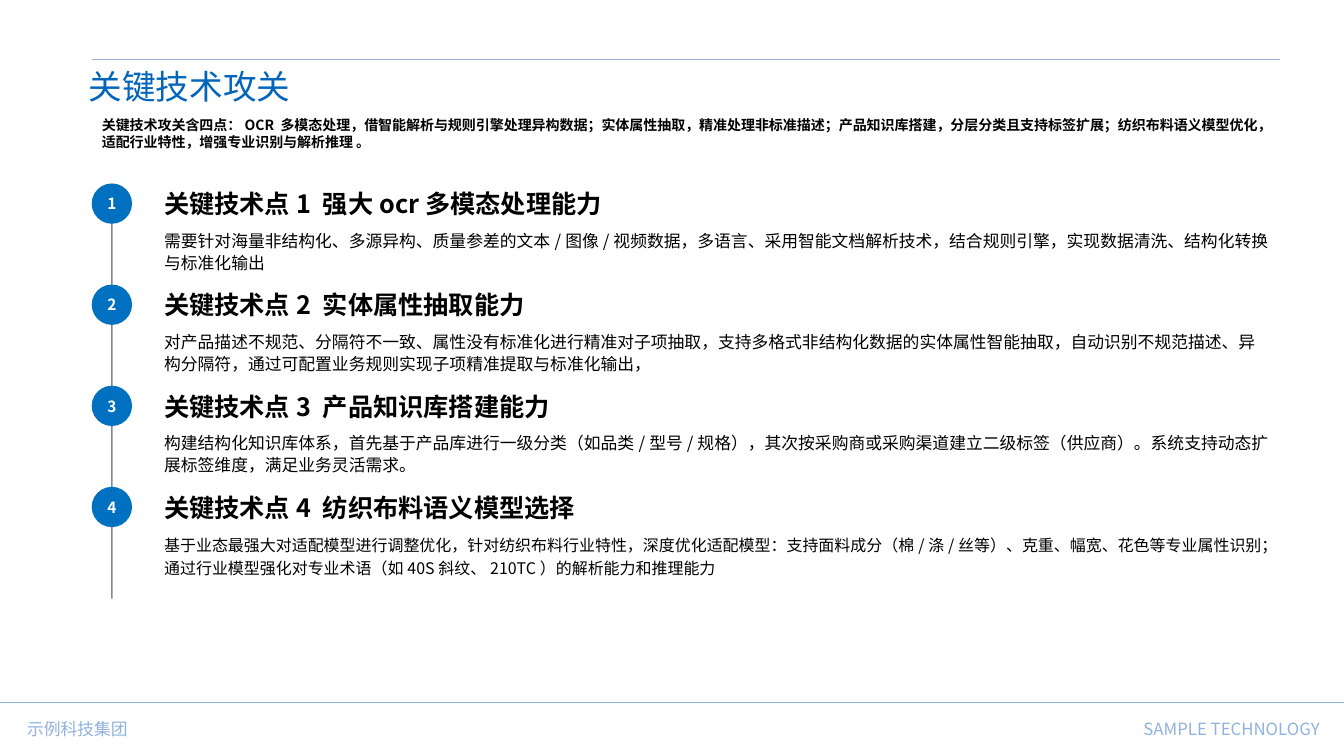
from lxml.etree import SubElement
from pptx import Presentation
from pptx.dml.color import RGBColor
from pptx.enum.shapes import MSO_CONNECTOR as CONN, MSO_SHAPE as SHAPE
from pptx.enum.text import MSO_ANCHOR as ANCHOR, MSO_AUTO_SIZE as FIT, PP_ALIGN as ALIGN
from pptx.oxml.ns import qn
from pptx.util import Inches, Pt

WIDTH, HEIGHT = 13.33, 7.5
FONT = "Noto Sans CJK SC"
BLUE, DOT_BLUE, PALE, DARK = "0065BB", "0070C0", "90B2DE", "0F1423"
BLACK, WHITE = "000000", "FFFFFF"

# Grid: a column of dots, a column of text, equal rows
LEFT, TEXT_LEFT, RIGHT = 0.91, 1.53, 12.7
TOP, ROW_STEP, DOT = 1.82, 3.01 / 3, 0.4
FOOTER_LINE, FOOTER_TOP = 6.97, 7.08

# Heading, description, description size, line spacing
POINTS = [
    ("关键技术点1 强大ocr多模态处理能力",
     "需要针对海量非结构化、多源异构、质量参差的文本/图像/视频数据，多语言、采用智能文档解析技术，"
     "结合规则引擎，实现数据清洗、结构化转换与标准化输出", 12, 1.1),
    ("关键技术点2 实体属性抽取能力",
     "对产品描述不规范、分隔符不一致、属性没有标准化进行精准对子项抽取，支持多格式非结构化数据的实体属性智能抽取，"
     "自动识别不规范描述、异构分隔符，通过可配置业务规则实现子项精准提取与标准化输出，", 12, 1.1),
    ("关键技术点3 产品知识库搭建能力",
     "构建结构化知识库体系，首先基于产品库进行一级分类（如品类/型号/规格），其次按采购商或采购渠道建立二级标签（供应商）。"
     "系统支持动态扩展标签维度，满足业务灵活需求。", 12, 1.1),
    ("关键技术点4 纺织布料语义模型选择",
     "基于业态最强大对适配模型进行调整优化，针对纺织布料行业特性，深度优化适配模型："
     "支持面料成分（棉/涤/丝等）、克重、幅宽、花色等专业属性识别；"
     "通过行业模型强化对专业术语（如40S斜纹、210TC）的解析能力和推理能力", 11.4, 1.2),
]
INTRO = ("关键技术攻关含四点：OCR 多模态处理，借智能解析与规则引擎处理异构数据；实体属性抽取，精准处理非标准描述；"
         "产品知识库搭建，分层分类且支持标签扩展；纺织布料语义模型优化，适配行业特性，增强专业识别与解析推理 。")


def rgb(value):
    return RGBColor.from_string(value)


def write(sp, text, size, color, bold=False, align=ALIGN.LEFT, anchor=ANCHOR.TOP, spacing=1.0):
    tf = sp.text_frame
    tf.text = text
    tf.word_wrap = True
    tf.auto_size = FIT.NONE
    tf.vertical_anchor = anchor
    p = tf.paragraphs[0]
    p.alignment, p.line_spacing, p.space_before = align, spacing, Pt(0)
    r = p.runs[0]
    r.font.name, r.font.size, r.font.bold = FONT, Pt(size), bold
    r.font.color.rgb = rgb(color)
    SubElement(r._r.get_or_add_rPr(), qn("a:ea"), typeface=FONT)
    return p


def place(sp, x, y, w, h):
    sp.left, sp.top, sp.width, sp.height = (Inches(v) for v in (x, y, w, h))
    return sp


def add_text(shapes, box, *args, **style):
    write(shapes.add_textbox(*(Inches(v) for v in box)), *args, **style)


def add_line(s, x1, y1, x2, y2, color, alpha=None):
    line = s.shapes.add_connector(CONN.STRAIGHT, *(Inches(v) for v in (x1, y1, x2, y2)))
    line.line.width = Pt(1)
    line.line.color.rgb = rgb(color)
    if alpha:
        clr = line._element.spPr.find(".//" + qn("a:srgbClr"))
        SubElement(clr, qn("a:alpha"), val=str(alpha * 1000))
    SubElement(line._element.spPr, qn("a:effectLst"))


def add_dot(shapes, x, y, label):
    dot = shapes.add_shape(SHAPE.OVAL, *(Inches(v) for v in (x, y, DOT, DOT)))
    dot.shadow.inherit = False
    dot.fill.solid()
    dot.fill.fore_color.rgb = rgb(DOT_BLUE)
    dot.line.fill.background()
    tf = dot.text_frame
    tf.margin_left = tf.margin_right = tf.margin_top = tf.margin_bottom = 0
    write(dot, label, 11, WHITE, bold=True, align=ALIGN.CENTER, anchor=ANCHOR.MIDDLE)


def add_point(s, number, heading, detail, size, spacing):
    y = TOP + (number - 1) * ROW_STEP
    shapes = s.shapes.add_group_shape().shapes
    add_dot(shapes, LEFT, y, str(number))
    add_text(shapes, (TEXT_LEFT, y, 6.2, DOT), heading, 18, BLACK, bold=True, anchor=ANCHOR.BOTTOM)
    add_text(shapes, (TEXT_LEFT, y + DOT, RIGHT - TEXT_LEFT, 0.53), detail, size, BLACK, spacing=spacing)


def add_footer(s):
    add_line(s, 0, FOOTER_LINE, WIDTH, FOOTER_LINE, PALE)
    add_text(s.shapes, (0.17, FOOTER_TOP, 3.77, 0.3), "示例科技集团", 12, PALE)
    add_text(s.shapes, (10.38, FOOTER_TOP, 2.81, 0.3), "SAMPLE TECHNOLOGY", 12, PALE, align=ALIGN.RIGHT)


def main():
    prs = Presentation()
    prs.slide_width, prs.slide_height = Inches(WIDTH), Inches(HEIGHT)
    s = prs.slides.add_slide(prs.slide_layouts[1])

    # Title and introduction
    write(place(s.shapes.title, 0.78, 0.6, 11.15, 0.5), "关键技术攻关", 24, BLUE)
    intro = place(s.placeholders[1], LEFT, 1.11, RIGHT - LEFT, 0.44)
    p = write(intro, INTRO, 10, BLACK, bold=True)
    pPr = p._p.get_or_add_pPr()
    pPr.set("marL", "0")
    pPr.set("indent", "0")
    SubElement(pPr, qn("a:buNone"))
    add_line(s, LEFT, 0.59, RIGHT, 0.59, PALE)

    # Numbered points along the timeline
    add_line(s, LEFT + DOT / 2, 1.86, LEFT + DOT / 2, 5.94, DARK, alpha=50)
    for number, point in enumerate(POINTS, 1):
        add_point(s, number, *point)

    add_footer(s)
    prs.save("out.pptx")


if __name__ == "__main__":
    main()
